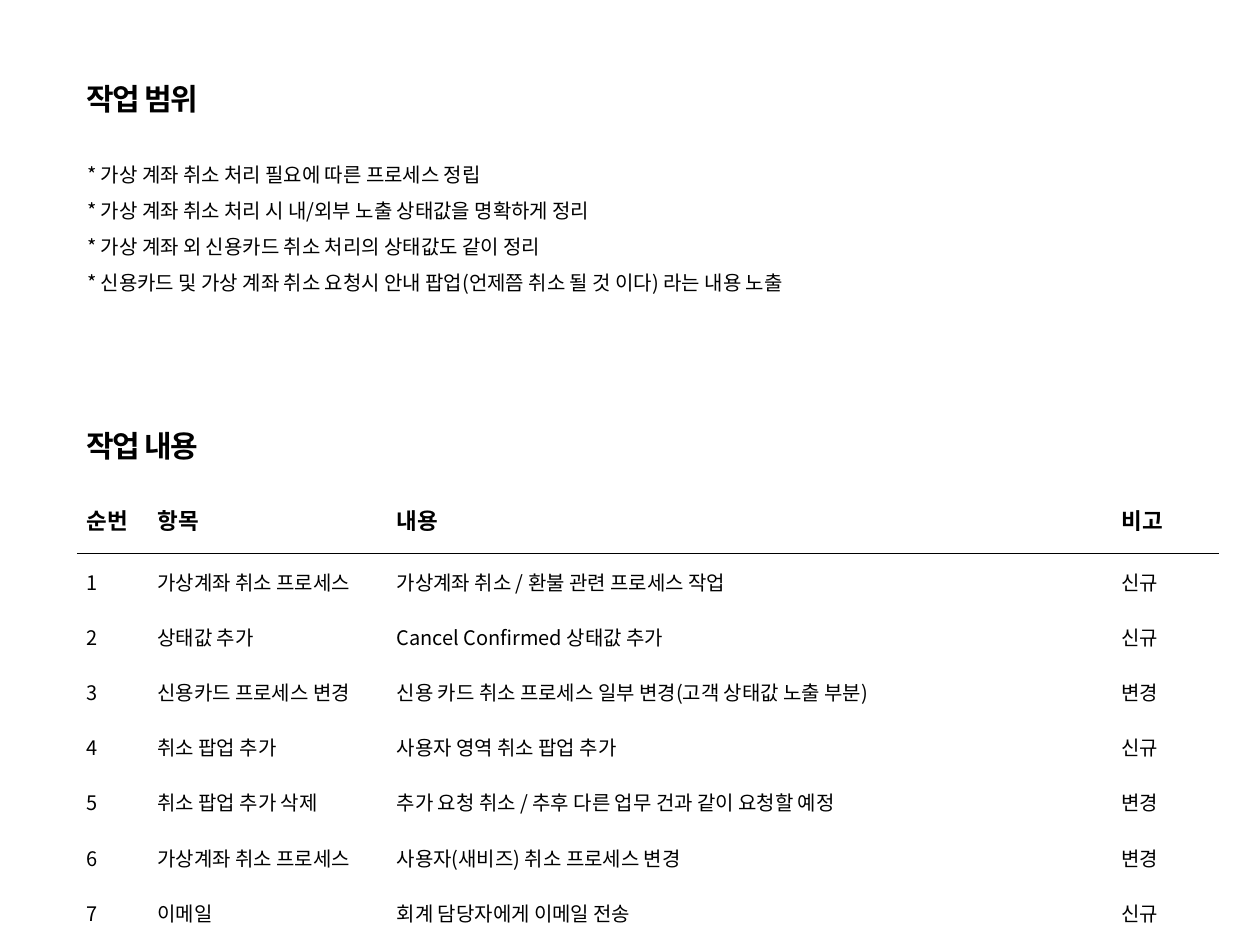
"""Build the slide on the scope and contents of the cancellation work."""
import dataclasses
import typing

import lxml.etree
import pptx
import pptx.dml.color
import pptx.enum.text
import pptx.oxml.ns
import pptx.slide
import pptx.table
import pptx.text.text
import pptx.util

EMU_PER_PX = 9144


@dataclasses.dataclass(frozen=True)
class Theme:
    font: str = "Noto Sans CJK KR"
    ink: str = "000000"
    paper: str = "FFFFFF"
    title_size: int = 24
    header_size: int = 18
    body_size: int = 16
    rule_width: int = 1


class Area(typing.NamedTuple):
    left: int
    top: int
    width: int
    height: int


class Heading(typing.NamedTuple):
    text: str
    area: Area


class Task(typing.NamedTuple):
    number: str
    item: str
    content: str
    remark: str


THEME = Theme()
HEADINGS = (
    Heading("작업 내용", Area(86, 470, 160, 50)),
    Heading("작업 범위", Area(86, 84, 160, 50)),
)
SCOPE_AREA = Area(87, 164, 936, 166)
SCOPE = (
    "* 가상 계좌 취소 처리 필요에 따른 프로세스 정립",
    "* 가상 계좌 취소 처리 시 내/외부 노출 상태값을 명확하게 정리",
    "* 가상 계좌 외 신용카드 취소 처리의 상태값도 같이 정리",
    "* 신용카드 및 가상 계좌 취소 요청시 안내 팝업(언제쯤 취소 될 것 이다) 라는 내용 노출",
)
TABLE_AREA = Area(86, 554, 1268, 491)
COLUMN_WIDTHS = (79, 266, 805, 118)
TASKS = (
    Task("순번", "항목", "내용", "비고"),
    Task("1", "가상계좌 취소 프로세스", "가상계좌 취소 / 환불 관련 프로세스 작업", "신규"),
    Task("2", "상태값 추가", "Cancel Confirmed 상태값 추가", "신규"),
    Task("3", "신용카드 프로세스 변경", "신용 카드 취소 프로세스 일부 변경(고객 상태값 노출 부분)", "변경"),
    Task("4", "취소 팝업 추가", "사용자 영역 취소 팝업 추가", "신규"),
    Task("5", "취소 팝업 추가 삭제", "추가 요청 취소 / 추후 다른 업무 건과 같이 요청할 예정", "변경"),
    Task("6", "가상계좌 취소 프로세스", "사용자(새비즈) 취소 프로세스 변경", "변경"),
    Task("7", "이메일", "회계 담당자에게 이메일 전송", "신규"),
)


def px(length: int) -> pptx.util.Emu:
    return pptx.util.Emu(length * EMU_PER_PX)


def color(value: str) -> pptx.dml.color.RGBColor:
    return pptx.dml.color.RGBColor.from_string(value)


def write(
    para: pptx.text.text._Paragraph,
    text: str,
    *,
    size: int,
    bold: bool = False,
    tracking: int = 0,
    line_spacing: float = 1.0,
) -> None:
    para.line_spacing = line_spacing
    span = para.add_run()
    span.text = text
    span.font.size = pptx.util.Pt(size)
    span.font.bold = bold
    span.font.color.rgb = color(THEME.ink)
    span.font.name = THEME.font
    properties = span.font._element
    east_asian = lxml.etree.SubElement(properties, pptx.oxml.ns.qn("a:ea"))
    east_asian.set("typeface", THEME.font)
    if tracking:
        properties.set("spc", str(tracking * 100))


def add_box(page: pptx.slide.Slide, area: Area, wrap: bool) -> pptx.text.text.TextFrame:
    frame = page.shapes.add_textbox(*map(px, area)).text_frame
    frame.word_wrap = wrap
    frame.auto_size = pptx.enum.text.MSO_AUTO_SIZE.SHAPE_TO_FIT_TEXT
    return frame


def add_heading(page: pptx.slide.Slide, heading: Heading) -> None:
    frame = add_box(page, heading.area, wrap=False)
    write(frame.paragraphs[0], heading.text, size=THEME.title_size, bold=True, tracking=-1)


def add_scope(page: pptx.slide.Slide) -> None:
    frame = add_box(page, SCOPE_AREA, wrap=True)
    frame.vertical_anchor = pptx.enum.text.MSO_ANCHOR.MIDDLE
    for index, line in enumerate(SCOPE):
        para = frame.add_paragraph() if index else frame.paragraphs[0]
        write(para, line, size=THEME.body_size, line_spacing=1.5)


def add_rule(cell: pptx.table._Cell, side: str) -> None:
    qn = pptx.oxml.ns.qn
    border = lxml.etree.Element(qn(f"a:ln{side}"), w=str(pptx.util.Pt(THEME.rule_width)))
    fill = lxml.etree.SubElement(border, qn("a:solidFill"))
    lxml.etree.SubElement(fill, qn("a:srgbClr"), val=THEME.ink)
    cell._tc.get_or_add_tcPr().insert(0, border)


def fill_cell(cell: pptx.table._Cell, text: str, row: int) -> None:
    header = row == 0
    cell.fill.solid()
    cell.fill.fore_color.rgb = color(THEME.paper)
    anchors = pptx.enum.text.MSO_ANCHOR
    cell.vertical_anchor = anchors.TOP if header else anchors.MIDDLE
    size = THEME.header_size if header else THEME.body_size
    write(cell.text_frame.paragraphs[0], text, size=size, bold=header)
    if row < 2:
        add_rule(cell, "B" if header else "T")


def add_tasks(page: pptx.slide.Slide) -> None:
    table = page.shapes.add_table(len(TASKS), len(COLUMN_WIDTHS), *map(px, TABLE_AREA)).table
    table.first_row = False
    table.horz_banding = False
    for column, width in zip(table.columns, COLUMN_WIDTHS):
        column.width = px(width)
    for row, task in enumerate(TASKS):
        table.rows[row].height = px(TABLE_AREA.height) // len(TASKS)
        for column, text in enumerate(task):
            fill_cell(table.cell(row, column), text, row)


def main() -> None:
    deck = pptx.Presentation()
    deck.slide_width, deck.slide_height = px(1400), px(1050)
    page = deck.slides.add_slide(deck.slide_layouts[6])
    for heading in HEADINGS:
        add_heading(page, heading)
    add_scope(page)
    add_tasks(page)
    deck.save("out.pptx")


if __name__ == "__main__":
    main()
